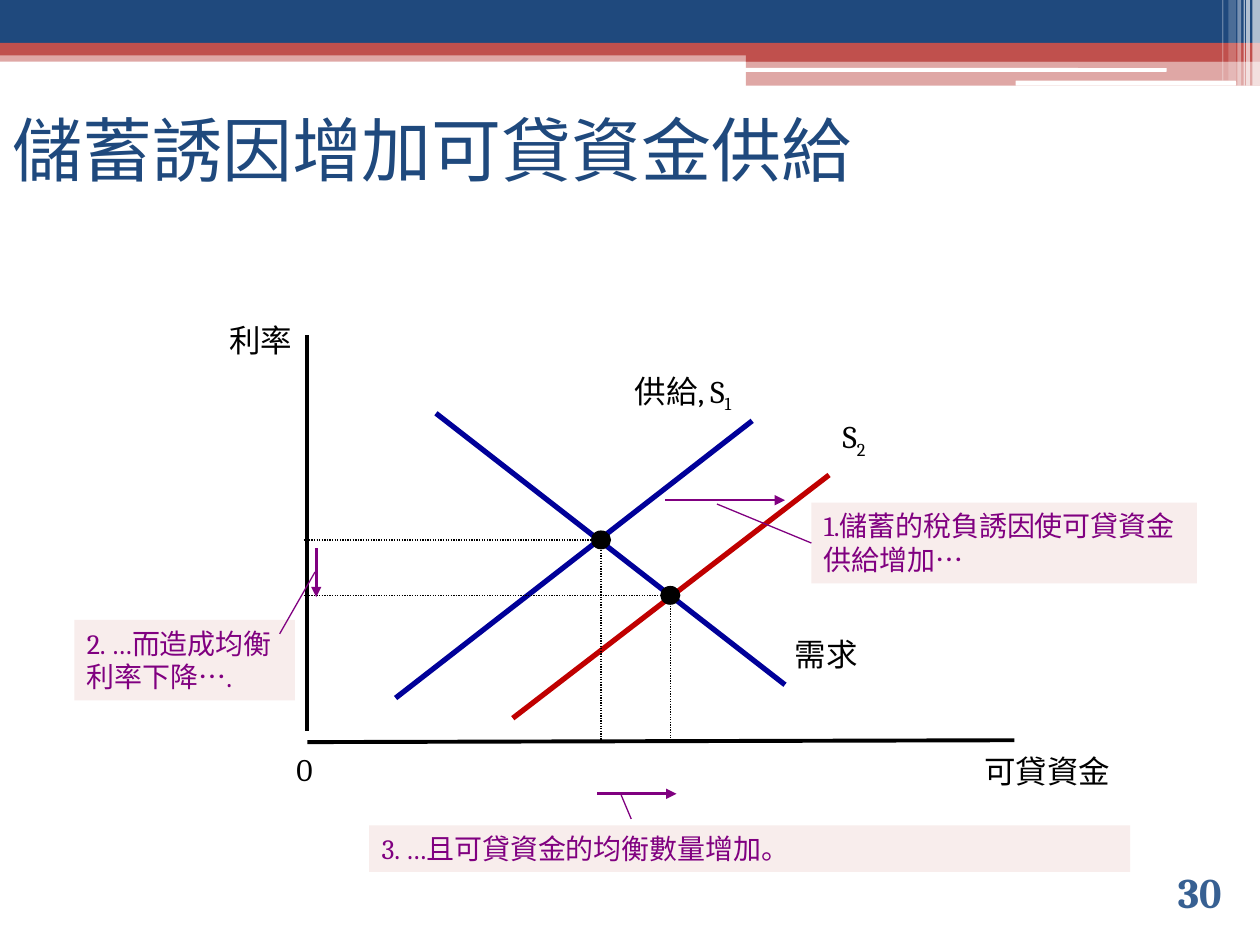
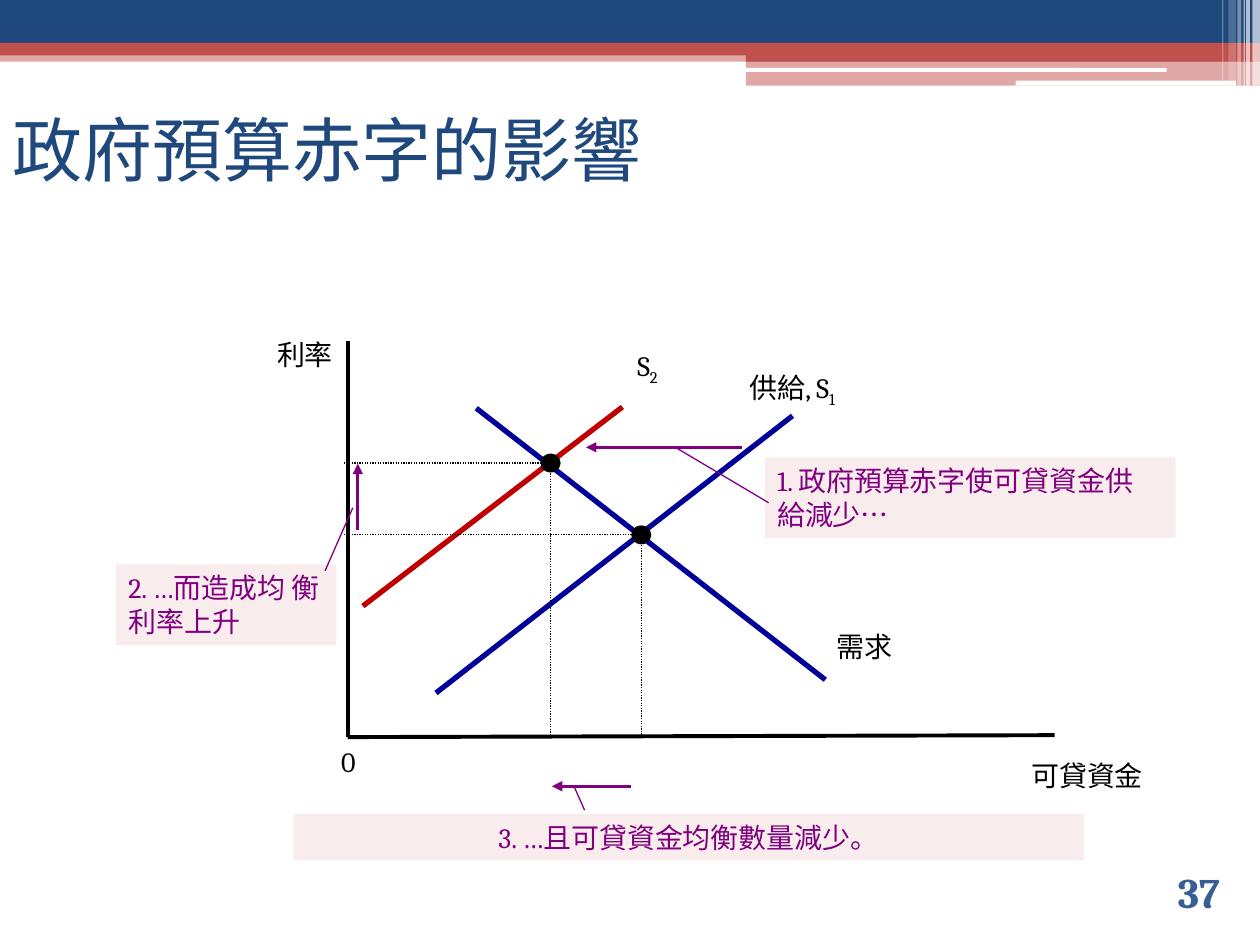
"""Build two slides on how policies shift the market for loanable funds."""
from dataclasses import dataclass

from lxml import etree
from pptx import Presentation
from pptx.dml.color import RGBColor
from pptx.enum.dml import MSO_LINE
from pptx.enum.shapes import MSO_CONNECTOR, MSO_SHAPE
from pptx.enum.text import MSO_ANCHOR, MSO_AUTO_SIZE, PP_ALIGN
from pptx.oxml.ns import qn
from pptx.util import Inches, Pt

RECTANGLE = MSO_SHAPE.RECTANGLE
ROUNDED = MSO_SHAPE.ROUNDED_RECTANGLE
OVAL = MSO_SHAPE.OVAL
STRAIGHT = MSO_CONNECTOR.STRAIGHT
DOTTED = MSO_LINE.ROUND_DOT
TOP, MIDDLE = MSO_ANCHOR.TOP, MSO_ANCHOR.MIDDLE
LEFT, CENTER, RIGHT = PP_ALIGN.LEFT, PP_ALIGN.CENTER, PP_ALIGN.RIGHT
GROW, FIXED = MSO_AUTO_SIZE.SHAPE_TO_FIT_TEXT, MSO_AUTO_SIZE.NONE

COLUMNS, ROWS = 100, 75
CELL = Inches(10) / COLUMNS
TITLE_FONT, BODY_FONT = "Cabin", "Cambria"
COLORS = {
    "navy": "1F497D", "red": "C0504D", "white": "FFFFFF", "black": "000000",
    "number": "376092", "curve": "000099", "shifted": "C00000",
    "note": "800080", "note_fill": "F8EDEC",
}

BANDS = [
    (RECTANGLE, (0, 4, 100, 0.9), "red", 50),
    (RECTANGLE, (0, 0, 100, 3.4), "navy", 100),
    (RECTANGLE, (0, 3.4, 100, 1), "red", 100),
    (RECTANGLE, (59.2, 3.9, 40.8, 1), "red", 100),
    (RECTANGLE, (59.2, 4.8, 40.8, 2), "red", 50),
    (ROUNDED, (59.1, 5.4, 33.5, 0.3), "white", 100),
    (ROUNDED, (80.6, 6.4, 17.5, 0.4), "white", 100),
]
STRIPES = [
    (99.4, 0.6, 6.8, 65), (98.9, 0.3, 6.8, 65), (98.7, 0.1, 6.8, 60),
    (98.2, 0.3, 6.8, 40), (97.5, 0.6, 6.4, 20), (97, 0.1, 6.4, 30),
]
SUPPLY = ((7, -3.5), (35.3, -25.5))
DEMAND = ((10.2, -26.1), (37.9, -4.55))
FIRST_BALANCE = (23.3, -16.05)
AXIS_LENGTHS = (56.1, 31.4)


@dataclass
class Note:
    """A boxed remark with the arrow it explains and the leader between them."""
    text: str
    box: tuple
    arrow: tuple
    leader: tuple
    align: PP_ALIGN = LEFT


@dataclass
class Market:
    """One diagram: curves are relative to the origin, the rest to the slide."""
    title: str
    number: str
    origin: tuple
    axis_top: float
    size: int
    labels: list
    shifted_supply: tuple
    new_balance: tuple
    notes: list


class Deck:
    """Holds the style and the current slide."""

    def __init__(self):
        """Start an empty presentation."""
        self.presentation = Presentation()
        self.presentation.slide_width = round(CELL * COLUMNS)
        self.presentation.slide_height = round(CELL * ROWS)
        self.slide = None

    def cells(self, values):
        """Turn grid cells into lengths."""
        return [round(CELL * value) for value in values]

    def color(self, name):
        """Look up a named colour."""
        return RGBColor.from_string(COLORS[name])

    def shape(self, kind, box, fill, opacity=100):
        """Add a borderless preset shape."""
        shape = self.slide.shapes.add_shape(kind, *self.cells(box))
        shape.shadow.inherit = False
        shape.line.fill.background()
        shape.fill.solid()
        shape.fill.fore_color.rgb = self.color(fill)
        if opacity < 100:
            tint = shape.fill._xPr.find(f".//{qn('a:srgbClr')}")
            etree.SubElement(tint, qn("a:alpha"), val=str(opacity * 1000))

    def line(self, start, end, color, width, dash=None, arrow=False):
        """Add a straight line, dotted or arrow-tipped on request."""
        connector = self.slide.shapes.add_connector(STRAIGHT, *self.cells(start + end))
        connector.line.width = Pt(width)
        connector.line.color.rgb = self.color(color)
        if dash:
            connector.line.dash_style = dash
        if arrow:
            etree.SubElement(connector.line._get_or_add_ln(), qn("a:tailEnd"), type="triangle")
        etree.SubElement(connector._element.spPr, qn("a:effectLst"))

    def text(self, text, box, size, color, subscript="", font=BODY_FONT, bold=False,
             align=LEFT, anchor=TOP, wrap=True, fit=GROW, fill=None):
        """Add a text box with an optional subscript run."""
        shape = self.slide.shapes.add_textbox(*self.cells(box))
        if fill:
            shape.fill.solid()
            shape.fill.fore_color.rgb = self.color(fill)
        frame = shape.text_frame
        frame.word_wrap, frame.auto_size, frame.vertical_anchor = wrap, fit, anchor
        paragraph = frame.paragraphs[0]
        paragraph.alignment = align
        for part in filter(None, (text, subscript)):
            run = paragraph.add_run()
            run.text = part
            run.font.name, run.font.size, run.font.bold = font, Pt(size), bold
            run.font.color.rgb = self.color(color)
            if part is subscript:
                run.font._element.set("baseline", "-25000")

    def page(self, title, number):
        """Start a slide with its bands, title and number."""
        self.slide = self.presentation.slides.add_slide(self.presentation.slide_layouts[6])
        for band in BANDS:
            self.shape(*band)
        for left, width, height, opacity in STRIPES:
            self.shape(RECTANGLE, (left, 0, width, height), "white", opacity)
        self.text(title, (0, 5.5, 100, 12.5), 40, "navy", font=TITLE_FONT,
                  anchor=MIDDLE, fit=FIXED)
        self.text(number, (92.5, 68.3, 6.2, 5), 24, "number", bold=True, fit=FIXED)

    def balance(self, point, origin):
        """Mark an equilibrium and drop its guides to both axes."""
        column, row = point
        self.line((origin[0] - 0.3, row), point, "black", 0.75, DOTTED)
        self.line(point, (column, origin[1] - 0.15), "black", 0.75, DOTTED)
        self.shape(OVAL, (column - 0.8, row - 0.75, 1.6, 1.5), "black")

    def note(self, note):
        """Add a boxed remark, its arrow and its leader."""
        self.line(*note.arrow, "note", 1.5, arrow=True)
        self.text(note.text, note.box, 16, "note", align=note.align, fill="note_fill")
        self.line(*note.leader, "note", 0.75)

    def market(self, market):
        """Draw a whole supply and demand slide."""
        self.page(market.title, market.number)
        origin = market.origin

        def place(point):
            return origin[0] + point[0], origin[1] + point[1]

        width, height = AXIS_LENGTHS
        top = (origin[0], market.axis_top)
        self.line(top, (origin[0], market.axis_top + height), "black", 2.25)
        self.line(origin, place((width, -0.15)), "black", 2.25)
        for curve, color in ((SUPPLY, "curve"), (DEMAND, "curve"),
                             (market.shifted_supply, "shifted")):
            self.line(*map(place, curve), color, 3)
        for point in (FIRST_BALANCE, market.new_balance):
            self.balance(place(point), origin)
        for text, subscript, align, box in market.labels:
            self.text(text, box, market.size, "black", subscript, align=align, wrap=False)
        for note in market.notes:
            self.note(note)


MARKETS = [
    Market(
        "儲蓄誘因增加可貸資金供給", "30", (24.4, 58.9), 26.6, 18,
        [("利率", "", RIGHT, (17.1, 25, 7.1, 4)),
         ("可貸資金", "", RIGHT, (77, 59.2, 12.1, 4)),
         ("0", "", RIGHT, (22.4, 59, 3.4, 4)),
         ("供給, S", "1", LEFT, (49.4, 29, 11.1, 4)),
         ("需求", "", LEFT, (62.1, 49.9, 7.1, 4)),
         ("S", "2", LEFT, (65.9, 32.6, 4.6, 4))],
        ((16.3, -1.9), (41.4, -21.2)), (28.8, -11.65),
        [Note("1.儲蓄的稅負誘因使可貸資金供給增加…", (64.4, 39.9, 30.6, 6.4),
              ((52.8, 39.7), (62.3, 39.7)), ((56.9, 40), (64.4, 43.1))),
         Note("3. …且可貸資金的均衡數量增加。", (29.3, 65.5, 60.4, 3.7),
              ((47.4, 63), (53.7, 63)), ((49.3, 63.1), (50.1, 65))),
         Note("2. …而造成均衡利率下降….", (5.9, 49.2, 17.5, 6.4),
              ((25.1, 43.5), (25.1, 47.4)), ((25, 45.4), (22.2, 50.3)))],
    ),
    Market(
        "政府預算赤字的影響", "37", (27.6, 58.5), 27.1, 16,
        [("利率", "", RIGHT, (20.9, 26.3, 6.5, 3.7)),
         ("可貸資金", "", RIGHT, (80.7, 59.7, 11, 3.7)),
         ("0", "", RIGHT, (25.9, 58.6, 3.3, 3.7)),
         ("供給, S", "1", LEFT, (58.5, 28.9, 10.1, 3.7)),
         ("需求", "", LEFT, (65.4, 49.5, 6.5, 3.7)),
         ("S", "2", LEFT, (49.6, 27.2, 4.3, 3.7))],
        ((1.2, -10.4), (21.8, -26.2)), (16.1, -21.75),
        [Note("1. 政府預算赤字使可貸資金供 給減少…", (60.7, 36.3, 32.6, 6.4),
              ((58.9, 35.5), (46.5, 35.5)), ((53.6, 35.5), (61, 39.9))),
         Note("3. …且可貸資金均衡數量減少。", (23.3, 64.6, 62.7, 3.7),
              ((50.1, 62.4), (43.8, 62.4)), ((45.6, 62.5), (46.4, 64.3)), CENTER),
         Note("2. …而造成均 衡利率上升", (9.2, 44.8, 17.5, 6.4),
              ((28.4, 42.1), (28.4, 36.8)), ((28, 40.3), (25.8, 45.3)))],
    ),
]


def main():
    """Build and save the slides."""
    deck = Deck()
    for market in MARKETS:
        deck.market(market)
    deck.presentation.save("out.pptx")


if __name__ == "__main__":
    main()
